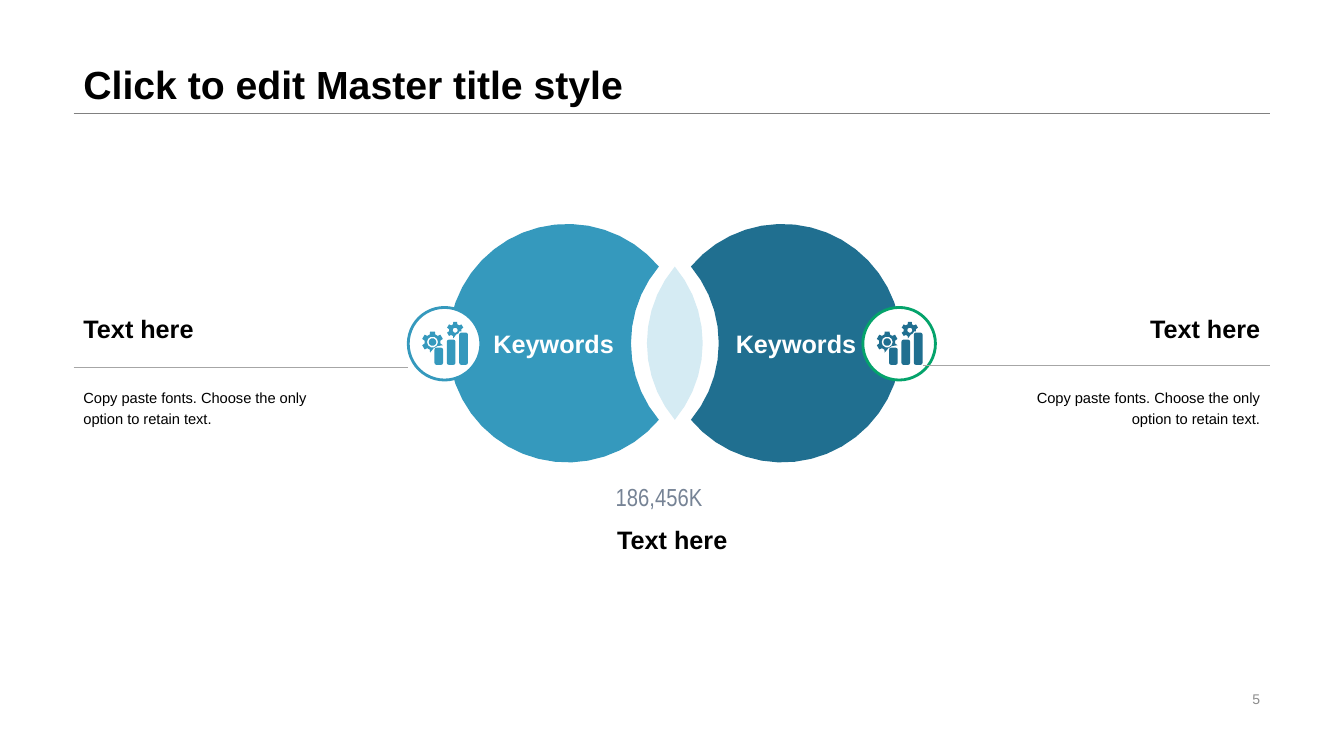
from math import cos, radians, sin

from lxml import etree
from pptx import Presentation
from pptx.dml.color import RGBColor
from pptx.enum.shapes import MSO_CONNECTOR, MSO_SHAPE
from pptx.enum.text import MSO_ANCHOR, PP_ALIGN
from pptx.oxml.ns import qn
from pptx.util import Emu, Pt

LEFT, MID, RIGHT = PP_ALIGN.LEFT, PP_ALIGN.CENTER, PP_ALIGN.RIGHT
TOP, CENTER, LOW = MSO_ANCHOR.TOP, MSO_ANCHOR.MIDDLE, MSO_ANCHOR.BOTTOM
OVAL, LINE = MSO_SHAPE.OVAL, MSO_CONNECTOR.STRAIGHT

HUES = {
    "ink": "000000", "white": "FFFFFF", "sky": "3599BD", "deep": "206F90",
    "pale": "D5EBF3", "green": "04A36B", "rule": "808080", "thin": "A6A6A6",
    "page": "8C8C8C", "slate": "768395",
}

# Grid: square cells of a tenth of an inch
CELL = 91440
WIDE, HIGH = 133.33, 75
EDGE, END = 7.3, 126

# Two circles that overlap; HALF is the angle from the axis to a crossing
AXIS, RAD, HALF = 66.95, 11.83, 40
ROW = 34.05
DISC = 56.3
REACH = RAD * cos(radians(HALF))


def unit(n):
    return Emu(round(n * CELL))


def hue(name):
    return RGBColor.from_string(HUES[name])


def write(frame, text, size=18, color="ink", bold=False, align=LEFT,
          anchor=TOP, space=1.0, font="Arial"):
    frame.word_wrap = True
    frame.vertical_anchor = anchor
    par = frame.paragraphs[0]
    par.alignment, par.line_spacing = align, space
    run = par.add_run()
    run.text = text
    run.font.name, run.font.size, run.font.bold = font, Pt(size), bold
    run.font.color.rgb = hue(color)


# Outlines, as lists of points in cells
def spot(x, y, rad, turn):
    return x + rad * cos(radians(turn)), y + rad * sin(radians(turn))


def arc(x, y, rad, start, stop, step=8):
    way = step if stop > start else -step
    return [spot(x, y, rad, a) for a in range(start, stop + way, way)]


def ring(x, y, rad):
    return arc(x, y, rad, 0, 324, 36)


def moon():
    outer = arc(DISC, ROW, RAD, HALF, 360 - HALF)
    bite = arc(DISC + 2 * REACH, ROW, RAD, 180 + HALF, 180 - HALF)
    return outer + bite


def lens():
    return (arc(AXIS - REACH, ROW, RAD, -HALF, HALF)
            + arc(AXIS + REACH, ROW, RAD, 180 - HALF, 180 + HALF))


def bar(x, y, wide, high, rad=0.2):
    ends = [(x + wide - rad, y + high - rad), (x + rad, y + high - rad),
            (x + rad, y + rad), (x + wide - rad, y + rad)]
    return [p for i, (cx, cy) in enumerate(ends)
            for p in arc(cx, cy, rad, 90 * i, 90 * i + 90, 45)]


def gear(x, y, tip, root, core, notch):
    """Six teeth, with the arc named by notch cut down to the core."""
    points = []
    for tooth in range(30, 390, 60):
        for off, rad in ((-20, root), (-13, tip), (13, tip), (20, root)):
            turn = tooth + off
            cut = notch[0] < turn < notch[1]
            points.append(spot(x, y, core if cut else rad, turn))
    return points


def icon(x, y):
    base = y + 2.1
    bars = [bar(x - 1 + 1.23 * i, base - high, 0.86, high)
            for i, high in enumerate((1.7, 2.5, 3.2))]
    bx, by = x - 1.19, y - 0.16
    sx, sy = x + 1.06, y - 1.34
    return bars + [
        gear(bx, by, 1.07, 0.8, 0.6, (22, 90)), ring(bx, by, 0.55),
        ring(bx, by, 0.38),
        gear(sx, sy, 0.84, 0.62, 0.44, (10, 80)), ring(sx, sy, 0.25),
    ]


class Board:
    def __init__(self, deck):
        deck.slide_width, deck.slide_height = unit(WIDE), unit(HIGH)
        self.slide = deck.slides.add_slide(deck.slide_layouts[6])
        self.items = self.slide.shapes

    def paint(self, shape, fill, edge=None):
        shape.shadow.inherit = False
        shape.fill.solid()
        shape.fill.fore_color.rgb = hue(fill)
        if edge:
            shape.line.color.rgb, shape.line.width = hue(edge), Pt(2)
        else:
            shape.line.fill.background()

    def text(self, box, words, **style):
        item = self.items.add_textbox(*map(unit, box))
        write(item.text_frame, words, **style)

    def rule(self, x1, x2, y, color, width):
        item = self.items.add_connector(
            LINE, unit(x1), unit(y), unit(x2), unit(y))
        item.line.color.rgb, item.line.width = hue(color), Pt(width)
        etree.SubElement(item._element.spPr, qn("a:effectLst"))

    def form(self, loops, fill):
        loops = [[(unit(x), unit(y)) for x, y in loop] for loop in loops]
        pen = self.items.build_freeform(*loops[0][0], scale=1.0)
        for i, loop in enumerate(loops):
            if i:
                pen.move_to(*loop[0])
            pen.add_line_segments(loop[1:], close=True)
        item = pen.convert_to_shape()
        self.paint(item, fill)
        return item

    def badge(self, x, y, fill, edge, size=7.2):
        box = (x - size / 2, y - size / 2, size, size)
        self.paint(self.items.add_shape(OVAL, *map(unit, box)), "white", edge)
        self.form(icon(x, y), fill)


def main():
    deck = Presentation()
    board = Board(deck)

    # Title and page number
    board.rule(EDGE, END, 11.2, "rule", 0.25)
    board.text((EDGE, 0, END - EDGE, 11.2), "Click to edit Master title style",
               size=28, bold=True, anchor=LOW, space=0.9)
    board.text((94.2, 68.2, 31.8, 2.3), "5", size=10, color="page",
               align=RIGHT, anchor=CENTER)

    # Overlap of the circles
    board.form([lens()], "pale")

    # Left and right: circle, badge, heading, note and rule
    left = moon()
    right = [(2 * AXIS - x, y) for x, y in left]
    sides = [
        (left, "sky", "sky", 44.1, EDGE, 24.2, LEFT, (EDGE, 40.5, 36.4)),
        (right, "deep", "green", 89.2, 98.5, 27.5, RIGHT, (91.6, END, 36.2)),
    ]
    for loop, fill, edge, mark, x, wide, align, span in sides:
        disc = board.form([loop], fill)
        write(disc.text_frame, "Keywords", color="white", bold=True,
              align=MID, anchor=CENTER)
        board.badge(mark, 34.1, fill, edge)
        board.text((x, 30.6, wide, 5.6), "Text here", bold=True, align=align)
        board.text((x, 37.7, wide, 6.3),
                   "Copy paste fonts. Choose the only option to retain text.",
                   size=10.5, align=align, space=1.2)
        board.rule(*span, "thin", 0.5)

    # Figure below the overlap
    board.text((60.1, 47.3, 13.1, 3.9), "186,456K", size=17.6,
               color="slate", font="Arial Narrow")
    board.text((56.5, 51.2, 20.4, 4.6), "Text here", bold=True,
               align=MID, anchor=CENTER)

    deck.save("out.pptx")


if __name__ == "__main__":
    main()
